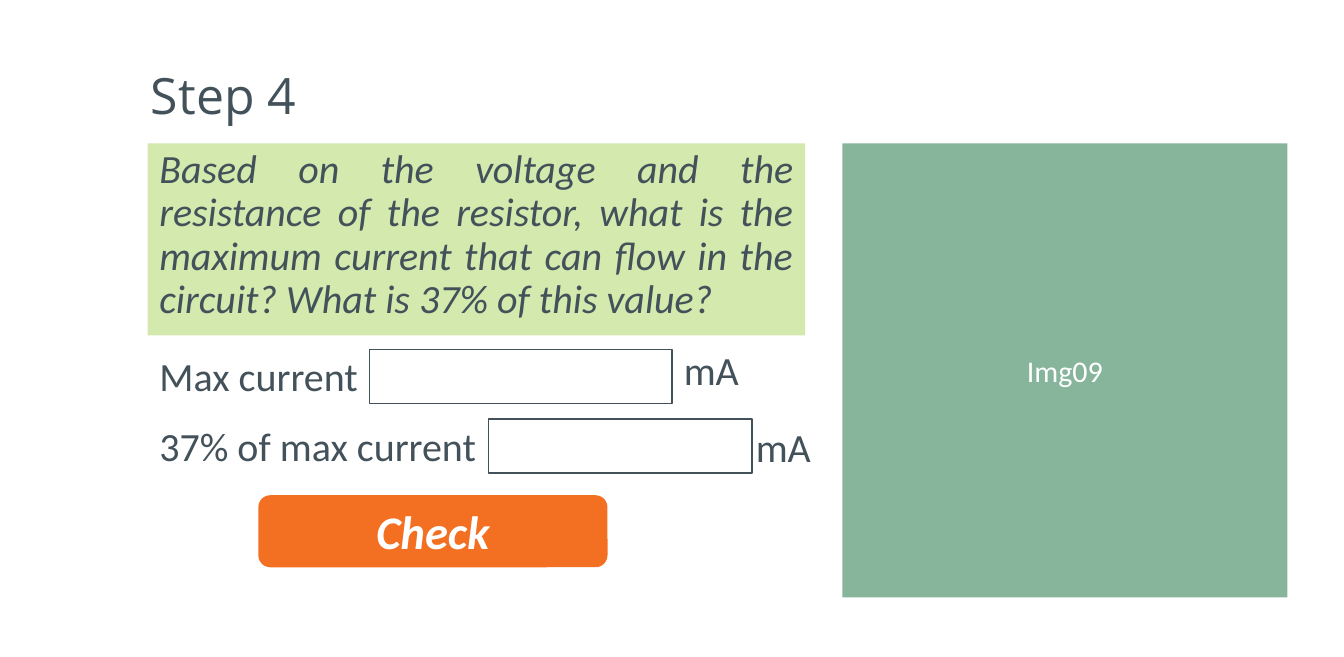
from pptx import Presentation
from pptx.dml.color import RGBColor as RGB
from pptx.enum.shapes import MSO_SHAPE as Kind
from pptx.enum.text import MSO_ANCHOR as Anchor, PP_ALIGN as Align
from pptx.util import Cm, Pt

SLATE = RGB(0x43, 0x52, 0x5A)
LIME = RGB(0xD3, 0xE9, 0xAD)
SAGE = RGB(0x86, 0xB5, 0x9C)
ORANGE = RGB(0xF3, 0x6F, 0x21)
WHITE = RGB(0xFF, 0xFF, 0xFF)


def write(shape, text, size=24, font="Calibri", color=SLATE, bold=False,
          italic=False, align=Align.LEFT, anchor=Anchor.TOP, wrap=True,
          lead=1.0, before=0):
    frame = shape.text_frame
    frame.word_wrap = wrap
    frame.vertical_anchor = anchor
    para = frame.paragraphs[0]
    para.alignment = align
    para.line_spacing = lead
    para.space_before = Pt(before)
    run = para.add_run()
    run.text = text
    face = run.font
    face.name, face.size = font, Pt(size)
    face.bold, face.italic = bold, italic
    face.color.rgb = color


class Page:
    cols, rows = 112, 54.7

    def __init__(self, deck):
        self.deck = deck
        self.slide = deck.slides.add_slide(deck.slide_layouts[6])

    def area(self, col, row, wide, high):
        dx = self.deck.slide_width / self.cols
        dy = self.deck.slide_height / self.rows
        return [round(n) for n in (col * dx, row * dy, wide * dx, high * dy)]

    def label(self, text, *cell, **style):
        box = self.slide.shapes.add_textbox(*self.area(*cell))
        write(box, text, **style)

    def block(self, *cell, kind=Kind.RECTANGLE, fill=None, line=None):
        box = self.slide.shapes.add_shape(kind, *self.area(*cell))
        box.shadow.inherit = False
        if fill is None:
            box.fill.background()
        else:
            box.fill.solid()
            box.fill.fore_color.rgb = fill
        if line is None:
            box.line.fill.background()
        else:
            box.line.color.rgb = line
            box.line.width = Pt(1)
        return box

    def entry(self, text, top, left, wide, unit, drop):
        self.label(text, 12.3, top - 0.3, left - 12.1, 5, wrap=False)
        self.block(left, top, wide, 4.5, line=SLATE)
        self.label("mA", unit, top + drop, 6.6, 5, wrap=False)


def main():
    deck = Presentation()
    deck.slide_width, deck.slide_height = Cm(28.45), Cm(13.9)
    page = Page(deck)
    mid = dict(align=Align.CENTER, anchor=Anchor.MIDDLE, color=WHITE)

    page.label("Step 4", 11.6, 2.9, 83.9, 10.6, size=30, font="Open Sans",
               anchor=Anchor.MIDDLE, lead=0.9)
    write(page.block(12.3, 11.93, 54.8, 16, fill=LIME),
          "Based on the voltage and the resistance of the resistor, what is "
          "the maximum current that can flow in the circuit? What is 37% of "
          "this value?",
          italic=True, align=Align.JUSTIFY, lead=0.9, before=7.3)
    write(page.block(70.2, 11.93, 37.1, 37.8, fill=SAGE), "Img09", size=18, **mid)
    page.entry("Max current", 29.1, 30.8, 25.2, 56, -0.8)
    page.entry("37% of max current", 34.9, 40.7, 22, 62, -0.2)
    write(page.block(21.53, 41.23, 29.1, 6, kind=Kind.ROUNDED_RECTANGLE, fill=ORANGE),
          "Check", size=28, bold=True, italic=True, **mid)
    deck.save("out.pptx")


if __name__ == "__main__":
    main()
